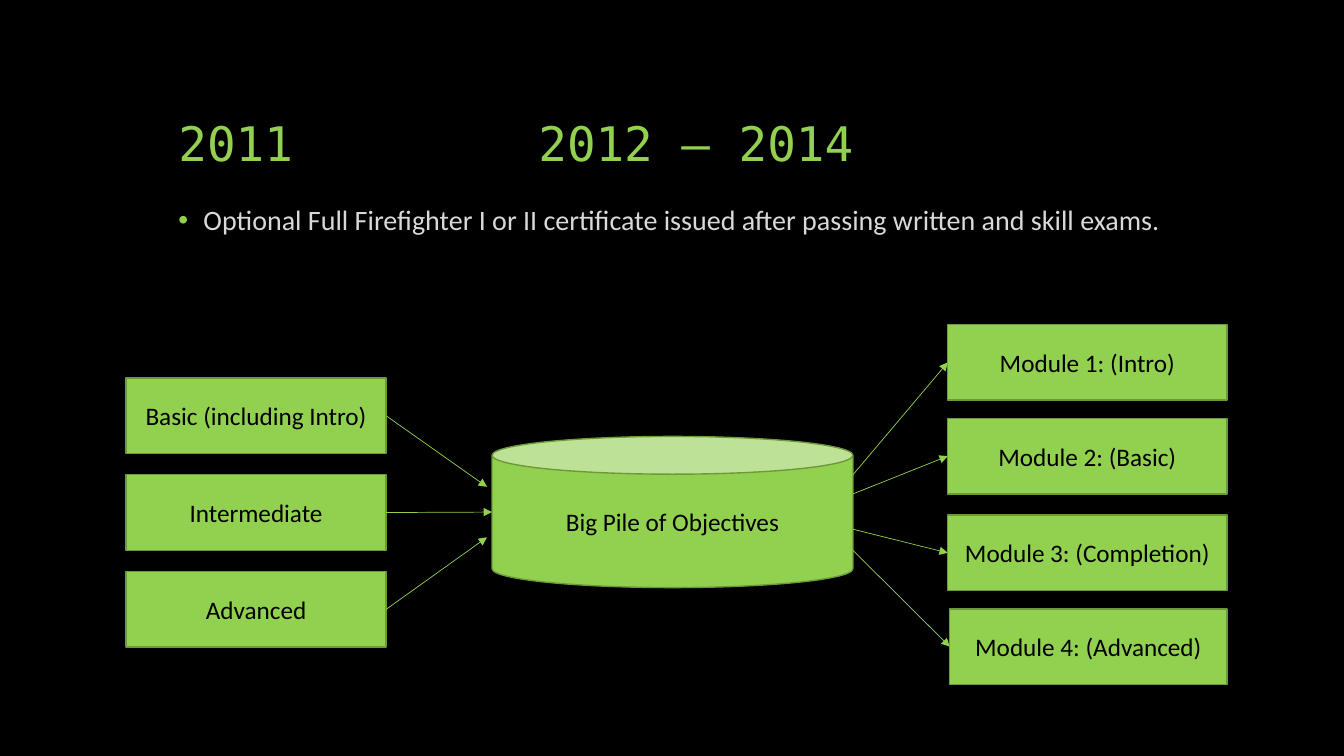
from dataclasses import dataclass

from lxml.etree import SubElement
from pptx import Presentation
from pptx.dml.color import RGBColor as RGB
from pptx.enum.shapes import MSO_CONNECTOR as LINK, MSO_SHAPE as SHAPE
from pptx.enum.text import MSO_ANCHOR as ANCHOR, MSO_AUTO_SIZE as FIT, PP_ALIGN as ALIGN
from pptx.oxml.ns import qn
from pptx.util import Inches, Pt


@dataclass(frozen=True)
class Theme:
    back: RGB = RGB(0, 0, 0)
    green: RGB = RGB(0x92, 0xD0, 0x50)
    edge: RGB = RGB(0x6C, 0x9A, 0x3B)
    pale: RGB = RGB(0xD9, 0xD9, 0xD9)
    ink: RGB = RGB(0, 0, 0)
    mono: str = "DejaVu Sans Mono"
    sans: str = "Calibri"
    head: Pt = Pt(34)
    body: Pt = Pt(20)
    label: Pt = Pt(18)


THEME = Theme()
BOX_H = 0.75
COURSES = ["Basic (including Intro)", "Intermediate", "Advanced"]
COURSE_X, COURSE_Y, COURSE_W, COURSE_STEP = 1.25, 3.75, 2.58, 0.96
PILE = (4.88, 4.33, 3.58, 1.5)
COURSE_ENDS = [(4.83, 4.83), (4.88, 5.08), (4.83, 5.33)]
# label, left, top, height at which the arrow leaves the pile
MODULES = [
    ("Module 1: (Intro)", 9.4, 3.22, 4.71),
    ("Module 2: (Basic)", 9.4, 4.15, 4.9),
    ("Module 3: (Completion)", 9.4, 5.11, 5.25),
    ("Module 4: (Advanced)", 9.42, 6.04, 5.46),
]
MODULE_END = 12.17


def place(item, box):
    for name, size in zip(("left", "top", "width", "height"), box):
        setattr(item, name, Inches(size))


def write(frame, text, font, size, color, align, anchor, space=1.0):
    for name, value in {"word_wrap": True, "auto_size": FIT.NONE,
                        "vertical_anchor": anchor}.items():
        setattr(frame, name, value)
    para = frame.paragraphs[0]
    para.alignment, para.line_spacing = align, space
    run = para.add_run()
    run.text = text
    for name, value in {"name": font, "size": size, "bold": False}.items():
        setattr(run.font, name, value)
    run.font.color.rgb = color
    return para


def add_title(slide, text, box, stop):
    """Fill the title, with a tab stop set in inches from the text edge."""
    title = slide.shapes.title
    place(title, box)
    para = write(title.text_frame, text, THEME.mono, THEME.head, THEME.green,
                 ALIGN.LEFT, ANCHOR.BOTTOM, 0.9)
    tabs = SubElement(para._p.get_or_add_pPr(), qn("a:tabLst"))
    SubElement(tabs, qn("a:tab"), pos=str(Inches(stop)), algn="l")


def add_bullet(slide, text, box):
    note = slide.shapes.add_textbox(*map(Inches, box))
    para = write(note.text_frame, text, THEME.sans, THEME.body, THEME.pale,
                 ALIGN.LEFT, ANCHOR.TOP, 0.9)
    props = para._p.get_or_add_pPr()
    props.set("marL", str(Inches(0.25)))
    props.set("indent", str(Inches(-0.25)))
    tint = SubElement(props, qn("a:buClr"))
    SubElement(tint, qn("a:srgbClr"), val=str(THEME.green))
    SubElement(props, qn("a:buFont"), typeface="Arial")
    SubElement(props, qn("a:buChar"), char="•")


def add_block(slide, kind, text, box):
    block = slide.shapes.add_shape(kind, *map(Inches, box))
    block.shadow.inherit = False
    block.fill.solid()
    block.fill.fore_color.rgb = THEME.green
    block.line.color.rgb = THEME.edge
    block.line.width = Pt(1)
    write(block.text_frame, text, THEME.sans, THEME.label, THEME.ink,
          ALIGN.CENTER, ANCHOR.MIDDLE)
    return block


def add_arrow(slide, start, end):
    arrow = slide.shapes.add_connector(LINK.STRAIGHT, *map(Inches, start + end))
    arrow.line.color.rgb = THEME.green
    arrow.line.width = Pt(0.5)
    SubElement(arrow.line._get_or_add_ln(), qn("a:tailEnd"), type="triangle")
    SubElement(arrow._element.spPr, qn("a:effectLst"))
    return arrow


def main():
    deck = Presentation()
    deck.slide_width, deck.slide_height = Inches(13.33), Inches(7.5)
    slide = deck.slides.add_slide(deck.slide_layouts[5])
    fill = slide.background.fill
    fill.solid()
    fill.fore_color.rgb = THEME.back

    add_title(slide, "2011\t2012 – 2014", (1.67, 0.5, 10, 1.25), 3.57)
    add_bullet(slide, "Optional Full Firefighter I or II certificate issued "
               "after passing written and skill exams.", (1.67, 2, 10, 1.75))
    add_block(slide, SHAPE.CAN, "Big Pile of Objectives", PILE)

    for row, (text, end) in enumerate(zip(COURSES, COURSE_ENDS)):
        top = COURSE_Y + row * COURSE_STEP
        box = add_block(slide, SHAPE.RECTANGLE, text,
                        (COURSE_X, top, COURSE_W, BOX_H))
        start = (COURSE_X + COURSE_W, top + BOX_H / 2)
        add_arrow(slide, start, end).begin_connect(box, 3)

    for text, left, top, exit_y in MODULES:
        box = add_block(slide, SHAPE.RECTANGLE, text,
                        (left, top, MODULE_END - left, BOX_H))
        start = (PILE[0] + PILE[2], exit_y)
        add_arrow(slide, start, (left, top + BOX_H / 2)).end_connect(box, 1)

    deck.save("out.pptx")


if __name__ == "__main__":
    main()
